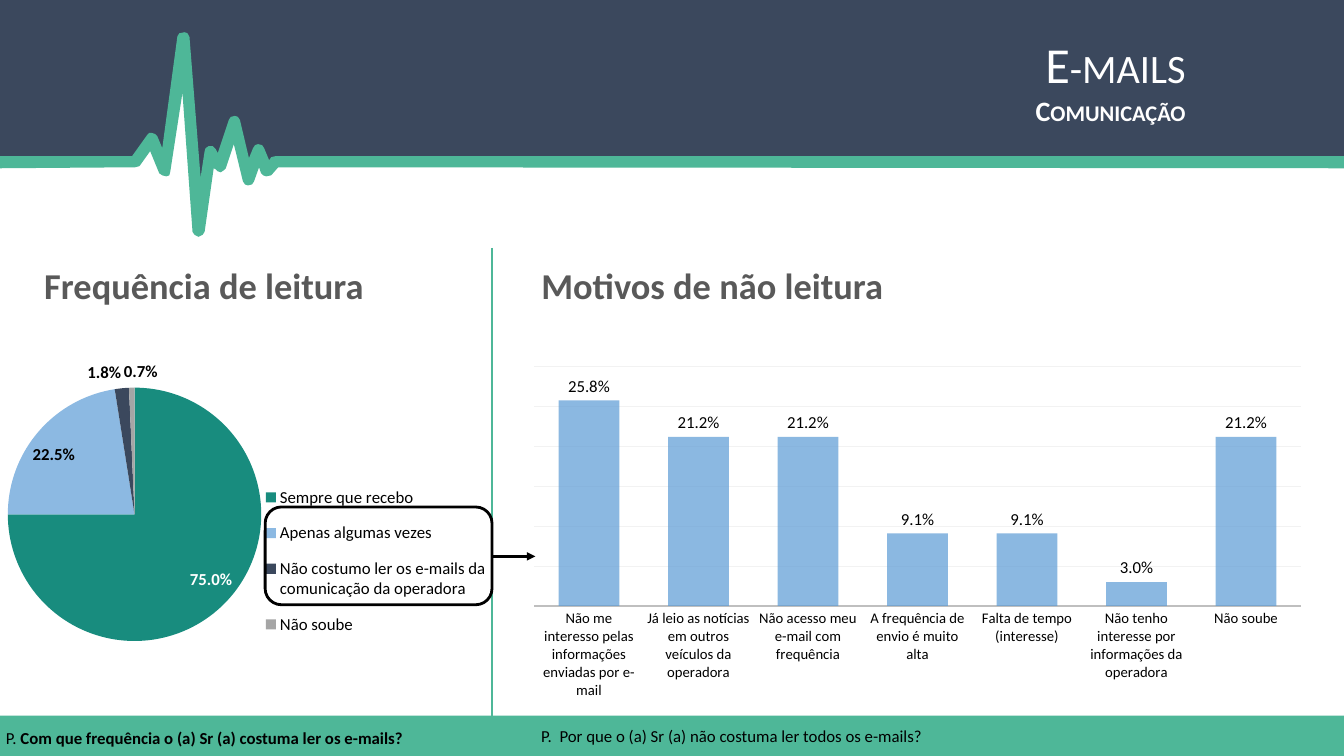
from dataclasses import dataclass

from lxml.etree import SubElement
from pptx import Presentation
from pptx.chart.data import CategoryChartData
from pptx.dml.color import RGBColor
from pptx.enum.chart import XL_CHART_TYPE as ChartType
from pptx.enum.chart import XL_LABEL_POSITION as LabelPosition
from pptx.enum.chart import XL_LEGEND_POSITION as LegendPosition
from pptx.enum.chart import XL_TICK_LABEL_POSITION as TickLabels
from pptx.enum.chart import XL_TICK_MARK as TickMark
from pptx.enum.shapes import MSO_CONNECTOR as Connector
from pptx.enum.shapes import MSO_SHAPE as Shape
from pptx.enum.text import MSO_ANCHOR as Anchor
from pptx.enum.text import MSO_AUTO_SIZE as AutoSize
from pptx.enum.text import PP_ALIGN as Align
from pptx.oxml import parse_xml
from pptx.oxml.ns import nsdecls, qn
from pptx.util import Inches, Pt


@dataclass(frozen=True)
class Theme:
    font: str = "Calibri"
    navy: str = "3B485D"
    green: str = "4EB798"
    teal: str = "188C7E"
    sky: str = "8CB9E2"
    bar: str = "5B9BD5"
    silver: str = "A5A5A5"
    axis: str = "BFBFBF"
    grid: str = "F2F2F2"
    heading: str = "595959"
    black: str = "000000"
    white: str = "FFFFFF"
    title_size: float = 36
    subtitle_size: float = 20
    heading_size: float = 26
    body_size: float = 12
    axis_size: float = 10.5


THEME = Theme()

BAND = [
    (13.33, 0), (0, 0), (0, 1.61), (1.34, 1.6), (1.52, 1.41), (1.62, 1.67),
    (1.81, 0.74), (1.97, 2.04), (2.08, 1.55), (2.18, 1.65), (2.31, 1.26),
    (2.46, 1.76), (2.58, 1.53), (2.65, 1.69), (2.75, 1.6), (13.33, 1.61),
]
PULSE = [
    (13.33, 1.55), (2.73, 1.55), (2.69, 1.56), (2.67, 1.59), (2.62, 1.47),
    (2.6, 1.44), (2.56, 1.43), (2.53, 1.44), (2.51, 1.47), (2.47, 1.57),
    (2.38, 1.19), (2.36, 1.16), (2.33, 1.15), (2.29, 1.16), (2.27, 1.19),
    (2.16, 1.52), (2.14, 1.48), (2.11, 1.45), (2.07, 1.45), (2.04, 1.47),
    (2.03, 1.5), (1.99, 1.76), (1.88, 0.37), (1.86, 0.33), (1.83, 0.32),
    (1.78, 0.33), (1.76, 0.36), (1.61, 1.47), (1.56, 1.35), (1.54, 1.33),
    (1.51, 1.32), (1.48, 1.32), (1.46, 1.34), (1.31, 1.55), (0, 1.55),
    (0, 1.67), (1.34, 1.66), (1.38, 1.65), (1.39, 1.64), (1.49, 1.5),
    (1.58, 1.72), (1.61, 1.74), (1.65, 1.75), (1.68, 1.74), (1.69, 1.7),
    (1.81, 0.92), (1.91, 2.3), (1.93, 2.33), (1.97, 2.35), (2.01, 2.33),
    (2.03, 2.3), (2.12, 1.67), (2.14, 1.68), (2.16, 1.7), (2.19, 1.71),
    (2.22, 1.69), (2.24, 1.67), (2.32, 1.43), (2.41, 1.8), (2.43, 1.83),
    (2.46, 1.84), (2.5, 1.83), (2.52, 1.8), (2.57, 1.66), (2.59, 1.72),
    (2.61, 1.74), (2.64, 1.75), (2.69, 1.74), (2.76, 1.66), (13.33, 1.67),
]
READING = {
    "Sempre que recebo": 0.75,
    "Apenas algumas vezes": 0.225,
    "Não costumo ler os e-mails da comunicação da operadora": 0.018,
    "Não soube": 0.007,
}
REASONS = {
    "Não me interesso pelas informações enviadas por e-mail": 0.258,
    "Já leio as notícias em outros veículos da operadora": 0.212,
    "Não acesso meu e-mail com frequência": 0.212,
    "A frequência de envio é muito alta": 0.091,
    "Falta de tempo (interesse)": 0.091,
    "Não tenho interesse por informações da operadora": 0.03,
    "Não soube": 0.212,
}


def rgb(color):
    return RGBColor.from_string(color)


def style_font(font, size=THEME.body_size, color=THEME.black, bold=False):
    font.name, font.size, font.bold = THEME.font, Pt(size), bold
    font.color.rgb = rgb(color)


def write(para, text, small_caps=False, align=Align.LEFT, **style):
    para.alignment = align
    span = para.add_run()
    span.text = text
    style_font(span.font, **style)
    if small_caps:
        span.font._element.set("cap", "small")


def place(part, index, x, y, w, h, inner=False):
    for old in part.findall(qn("c:layout")):
        part.remove(old)
    target = '<c:layoutTarget val="inner"/>' if inner else ""
    sizes = "".join(f'<c:{key} val="{value}"/>' for key, value in zip("xywh", (x, y, w, h)))
    part.insert(index, parse_xml(
        f'<c:layout {nsdecls("c")}><c:manualLayout>{target}<c:xMode val="edge"/>'
        f'<c:yMode val="edge"/>{sizes}</c:manualLayout></c:layout>'))


class SlideBuilder:
    def __init__(self, slide, theme):
        self.slide, self.shapes, self.theme = slide, slide.shapes, theme

    def outline(self, points, color):
        corners = [(Inches(x), Inches(y)) for x, y in points]
        builder = self.shapes.build_freeform(*corners[0], scale=1.0)
        builder.add_line_segments(corners[1:], close=True)
        self.paint(builder.convert_to_shape(), fill=color)

    def paint(self, shape, fill=None, line=None):
        shape.shadow.inherit = False
        if fill:
            shape.fill.solid()
            shape.fill.fore_color.rgb = rgb(fill)
        else:
            shape.fill.background()
        if line:
            shape.line.color.rgb = rgb(line)
            shape.line.width = Pt(2)
        else:
            shape.line.fill.background()

    def shape(self, kind, bounds, **colors):
        self.paint(self.shapes.add_shape(kind, *map(Inches, bounds)), **colors)

    def title(self, bounds, title, subtitle):
        box = self.shapes.title
        self.shapes._spTree.append(box._element)
        box.left, box.top, box.width, box.height = map(Inches, bounds)
        frame = box.text_frame
        frame.auto_size, frame.vertical_anchor = AutoSize.NONE, Anchor.TOP
        look = dict(small_caps=True, align=Align.RIGHT, color=self.theme.white)
        write(frame.paragraphs[0], title, size=self.theme.title_size, **look)
        write(frame.add_paragraph(), subtitle, size=self.theme.subtitle_size, bold=True, **look)

    def text(self, bounds, *pieces, **style):
        frame = self.shapes.add_textbox(*map(Inches, bounds)).text_frame
        frame.word_wrap = True
        for text, bold in pieces:
            write(frame.paragraphs[0], text, bold=bold, **style)

    def line(self, start, end, color, width, arrow=False):
        line = self.shapes.add_connector(Connector.STRAIGHT, *map(Inches, start + end))
        line.line.color.rgb = rgb(color)
        line.line.width = Pt(width)
        if arrow:
            SubElement(line.line._get_or_add_ln(), qn("a:tailEnd"), type="triangle")
        SubElement(line._element.spPr, qn("a:effectLst"))

    def chart(self, kind, bounds, values, plot_area):
        data = CategoryChartData(number_format="0.0%")
        data.categories = list(values)
        data.add_series("Series 1", list(values.values()))
        chart = self.shapes.add_chart(kind, *map(Inches, bounds), data).chart
        chart.has_title = chart.has_legend = False
        style_font(chart.font)
        place(chart._chartSpace.chart.plotArea, 0, *plot_area, inner=True)
        plot = chart.plots[0]
        plot.vary_by_categories = kind == ChartType.PIE
        plot.has_data_labels = False
        return chart, plot, plot.series[0]

    def labels(self, series, position, bold=False):
        labels = series.data_labels
        labels.show_value, labels.position = True, position
        labels.number_format, labels.number_format_is_linked = "0.0%", False
        style_font(labels.font, bold=bold)

    def pie(self, bounds, values, colors):
        chart, _, series = self.chart(ChartType.PIE, bounds, values, (0.097, 0.092, 0.613, 0.838))
        chart.has_legend = True
        chart.legend.position = LegendPosition.RIGHT
        chart.legend.include_in_layout = False
        style_font(chart.legend.font)
        place(chart.legend._element, 1, 0.61, 0.37, 0.39, 0.59)
        self.labels(series, LabelPosition.BEST_FIT, bold=True)
        for index, color in enumerate(colors):
            fill = series.points[index].format.fill
            fill.solid()
            fill.fore_color.rgb = rgb(color)
        largest = series.points[0].data_label
        style_font(largest.font, color=self.theme.white, bold=True)
        largest.position = LabelPosition.BEST_FIT

    def columns(self, bounds, values):
        chart, plot, series = self.chart(
            ChartType.COLUMN_CLUSTERED, bounds, values, (0.02, 0.02, 0.96, 0.69))
        plot.gap_width, plot.overlap = 80, 25
        self.labels(series, LabelPosition.OUTSIDE_END)
        fill = series.format.fill
        fill.solid()
        fill.fore_color.rgb = rgb(self.theme.bar)
        color = next(series._element.spPr.iter(qn("a:srgbClr")))
        SubElement(color, qn("a:alpha"), val="70000")
        reasons, scale = chart.category_axis, chart.value_axis
        reasons.major_tick_mark = TickMark.NONE
        reasons.format.line.color.rgb = rgb(self.theme.axis)
        reasons.format.line.width = Pt(1.25)
        style_font(reasons.tick_labels.font, size=self.theme.axis_size)
        scale.minimum_scale, scale.maximum_scale, scale.major_unit = 0, 0.3, 0.05
        scale.major_tick_mark, scale.tick_label_position = TickMark.NONE, TickLabels.NONE
        scale.format.line.fill.background()
        grid = scale.major_gridlines.format.line
        grid.color.rgb, grid.width = rgb(self.theme.grid), Pt(0.75)


def main():
    deck = Presentation()
    deck.slide_width, deck.slide_height = Inches(13.33), Inches(7.5)
    page = SlideBuilder(deck.slides.add_slide(deck.slide_layouts[5]), THEME)
    page.outline(BAND, THEME.navy)
    page.outline(PULSE, THEME.green)
    page.pie((-1.07, 3.57, 5.96, 3), READING, (THEME.teal, THEME.sky, THEME.navy, THEME.silver))
    page.shape(Shape.RECTANGLE, (0, 7.1, 13.33, 0.4), fill=THEME.green)
    page.title((2.46, 0.28, 9.4, 1.04), "E-mails", "Comunicação")
    page.text((-0.04, 7.17, 5.35, 0.3), ("P. ", False),
              ("Com que frequência o (a) Sr (a) costuma ler os e-mails?", True))
    page.text((5.27, 7.15, 6.36, 0.3),
              ("P.  Por que o (a) Sr (a) não costuma ler todos os e-mails?", False))
    for left, width, heading in ((0.34, 4.55, "Frequência de leitura"),
                                 (5.27, 5.68, "Motivos de não leitura")):
        page.text((left, 2.56, width, 0.54), (heading, True),
                  size=THEME.heading_size, color=THEME.heading)
    page.line((4.88, 2.46), (4.88, 7.15), THEME.green, 1)
    page.shape(Shape.ROUNDED_RECTANGLE, (2.63, 5.03, 2.25, 0.97), line=THEME.black)
    page.line((4.88, 5.52), (5.31, 5.52), THEME.black, 2, arrow=True)
    page.columns((5.14, 3.57, 7.92, 3.44), REASONS)
    deck.save("out.pptx")


if __name__ == "__main__":
    main()
